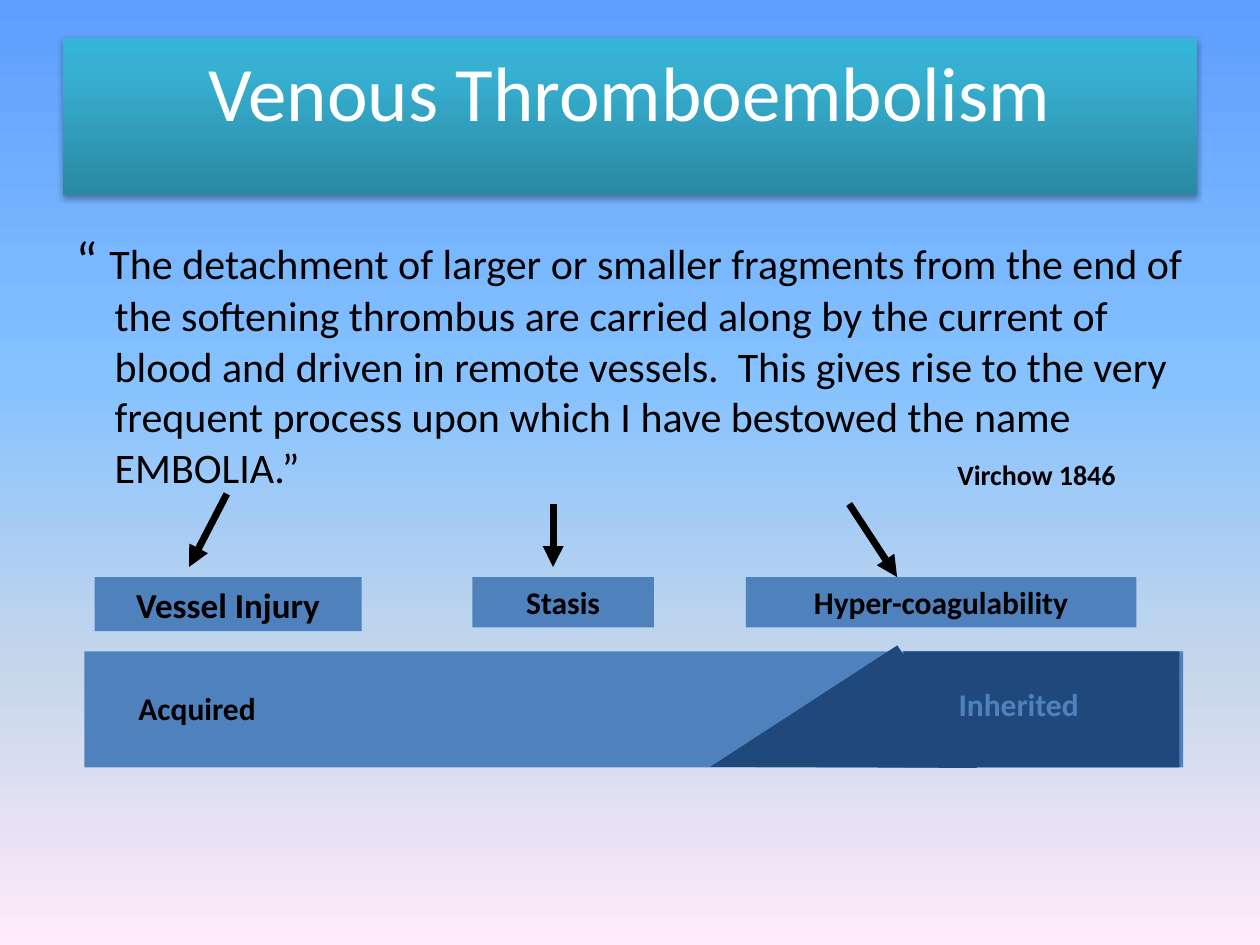
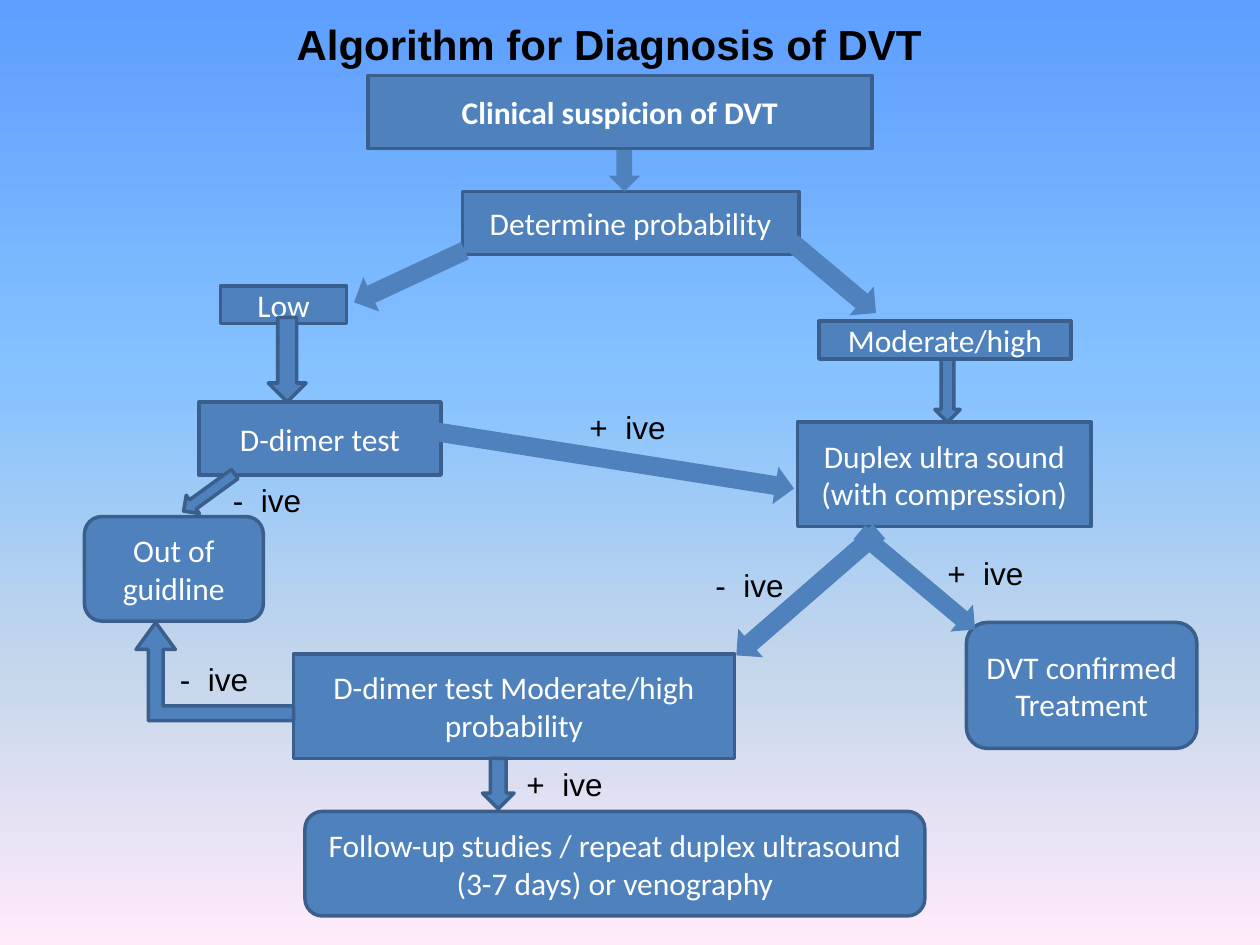
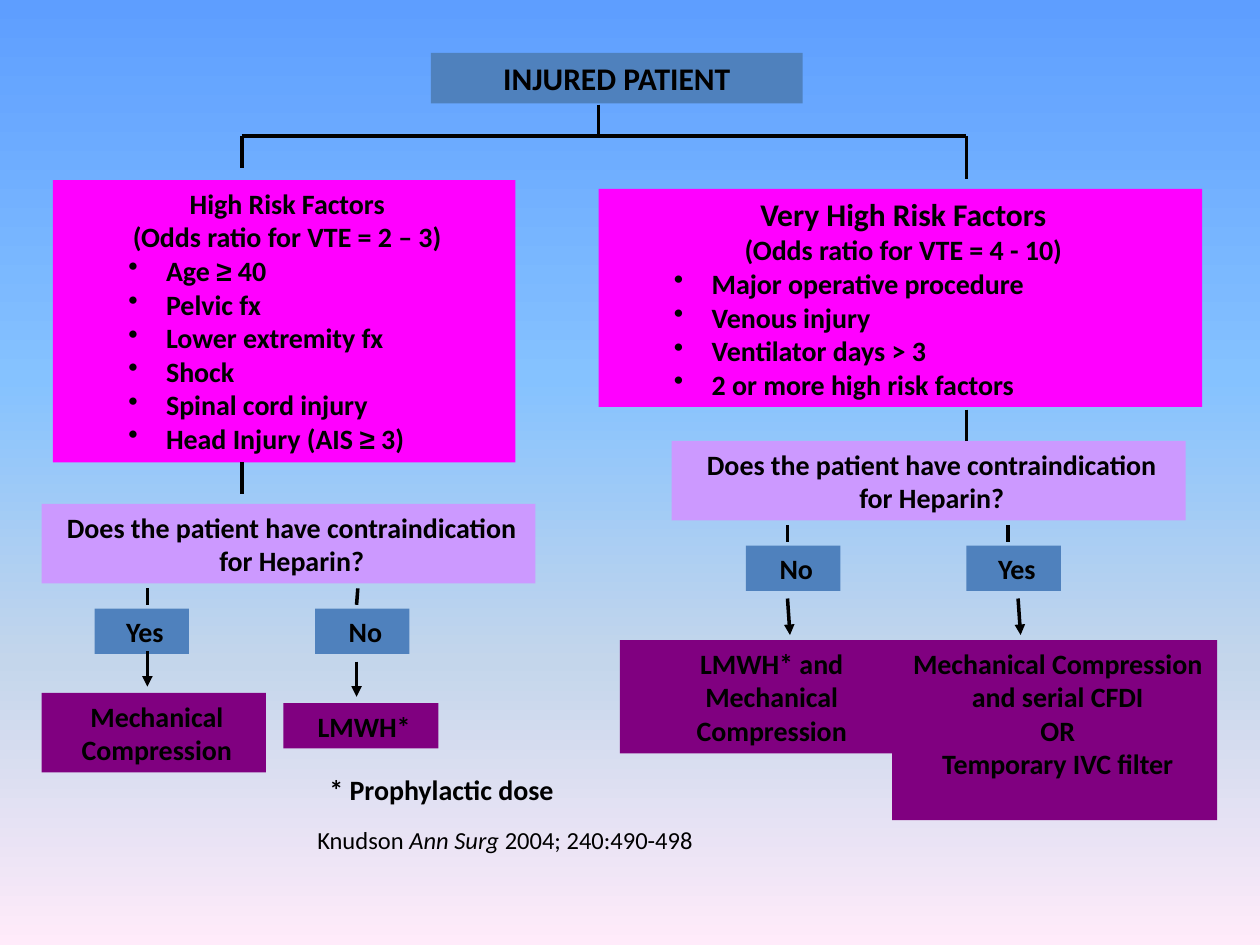
import pptx
import pptx.dml.color
import pptx.enum.dml
import pptx.enum.shapes
import pptx.enum.text
import pptx.oxml
import pptx.oxml.ns
import pptx.util
from pptx.util import Inches

COLORS = {
    "black": "000000",
    "white": "FFFFFF",
    "blue": "4F81BD",
    "outline": "3A5F8C",
    "navy": "1F497D",
    "magenta": "FF00FF",
    "lilac": "CC99FF",
    "purple": "800080",
}
SKY = [(0, "5E9EFF"), (40, "85C2FF"), (70, "C4D6EB"), (100, "FFEBFA")]
TEAL = [(0, "2A88A2"), (80, "37B1D2"), (100, "34B4D6")]
SHAPES = pptx.enum.shapes.MSO_SHAPE
ALIGN = pptx.enum.text.PP_ALIGN
ANCHOR = pptx.enum.text.MSO_ANCHOR
QUESTION = "Does the patient have contraindication for Heparin?"


def rgb(name):
    return pptx.dml.color.RGBColor.from_string(COLORS[name])


def make_element(tag, **attributes):
    element = pptx.oxml.parse_xml(f"<{tag} {pptx.oxml.ns.nsdecls('a')}/>")
    for key, value in attributes.items():
        element.set(key, str(value))
    return element


def add_child(parent, tag, **attributes):
    child = make_element(tag, **attributes)
    parent.append(child)
    return child


def fill_gradient(fill, holder, stops, angle):
    fill.gradient()
    fill.gradient_angle = angle
    stop_list = next(holder.iter(pptx.oxml.ns.qn("a:gsLst")))
    for stop in list(stop_list):
        stop_list.remove(stop)
    for position, color in stops:
        stop = add_child(stop_list, "a:gs", pos=position * 1000)
        add_child(stop, "a:srgbClr", val=color)


def fill_solid(shape, color):
    shape.fill.solid()
    shape.fill.fore_color.rgb = rgb(color)


def place(shape, at):
    shape.left, shape.top, shape.width, shape.height = map(Inches, at)


def set_indent(para, left, first=0):
    properties = para._p.get_or_add_pPr()
    properties.set("marL", str(Inches(left)))
    properties.set("indent", str(Inches(first)))
    return properties


def write(shape, paragraphs, size=18, color="black", bold=False, font="Calibri",
          align=ALIGN.CENTER, anchor=ANCHOR.TOP, indent=0):
    frame = shape.text_frame
    frame.word_wrap = True
    frame.auto_size = pptx.enum.text.MSO_AUTO_SIZE.NONE
    frame.vertical_anchor = anchor
    for index, spans in enumerate(paragraphs):
        para = frame.add_paragraph() if index else frame.paragraphs[0]
        para.alignment = align
        para.font.size = pptx.util.Pt(size)
        para.font.name = font
        para.font.bold = bold
        para.font.color.rgb = rgb(color)
        if indent:
            set_indent(para, indent)
        for text, style in [(spans, {})] if isinstance(spans, str) else spans:
            span = para.add_run()
            span.text = text
            for key, value in style.items():
                setattr(span.font, key, value)


def add_title(slide, at, text, **style):
    title = slide.shapes.title
    place(title, at)
    write(title, [text], **style)
    return title


def add_text(slide, at, spans, **style):
    box = slide.shapes.add_textbox(*map(Inches, at))
    write(box, [spans], **{"align": ALIGN.LEFT, **style})


def add_block(slide, at, color="blue", kind=SHAPES.RECTANGLE, outlined=False, rotation=0):
    block = slide.shapes.add_shape(kind, *map(Inches, at))
    block.shadow.inherit = False
    block.rotation = rotation
    fill_solid(block, color)
    if outlined:
        block.line.color.rgb = rgb("outline")
        block.line.width = pptx.util.Pt(2)
    else:
        block.line.fill.background()
    return block


def add_label(slide, at, paragraphs, color="blue", **style):
    block = add_block(slide, at, color)
    write(block, paragraphs, **{"size": 16, "bold": True, "indent": 0.05, **style})
    return block


def add_step(slide, at, paragraphs, kind=SHAPES.RECTANGLE, bold=False):
    block = add_block(slide, at, kind=kind, outlined=True)
    write(block, paragraphs, color="white", bold=bold, anchor=ANCHOR.MIDDLE)


def add_line(slide, start, end, width=2, arrow=False):
    line = slide.shapes.add_connector(
        pptx.enum.shapes.MSO_CONNECTOR.STRAIGHT, *map(Inches, start + end))
    line.line.color.rgb = rgb("black")
    line.line.width = pptx.util.Pt(width)
    if arrow:
        add_child(line.line._get_or_add_ln(), "a:tailEnd", type="triangle")
    add_child(line.element.spPr, "a:effectLst")


def add_risk_box(slide, at, heading, heading_size, odds, factors):
    box = add_label(slide, at, [heading, odds, *factors], "magenta")
    paragraphs = box.text_frame.paragraphs
    paragraphs[0].font.size = pptx.util.Pt(heading_size)
    for para in paragraphs[2:]:
        para.alignment = ALIGN.LEFT
        set_indent(para, 0.8, -0.3).insert(0, make_element("a:buChar", char="•"))


def add_title_shadow(title):
    effects = add_child(title.element.spPr, "a:effectLst")
    shadow = add_child(effects, "a:outerShdw", blurRad=pptx.util.Pt(3.1),
                       dist=pptx.util.Pt(1.8), dir=90 * 60000, rotWithShape=0)
    color = add_child(shadow, "a:srgbClr", val=COLORS["black"])
    add_child(color, "a:alpha", val=35000)


def build_embolism(slide):
    title = add_title(slide, (0.5, 0.3, 9, 1.25), "Venous Thromboembolism",
                      size=44, color="white")
    fill_gradient(title.fill, title.element, TEAL, 90)
    add_title_shadow(title)

    quote = slide.placeholders[1]
    place(quote, (0.5, 1.75, 9, 2.42))
    write(quote, [[
        ("“ ", {"size": pptx.util.Pt(30)}),
        ("The detachment of larger or smaller fragments from the end of the softening "
         "thrombus are carried along by the current of blood and driven in remote "
         "vessels.  This gives rise to the very frequent process upon which I have "
         "bestowed the name EMBOLIA.”", {}),
    ]], size=24, align=ALIGN.LEFT)
    set_indent(quote.text_frame.paragraphs[0], 0.31, -0.31).insert(
        0, make_element("a:buNone"))

    for left, width, height, cause, size in [
        (0.75, 2.12, 0.43, "Vessel Injury", 20),
        (3.75, 1.44, 0.4, "Stasis", 18),
        (5.92, 3.1, 0.4, "Hyper-coagulability", 18),
    ]:
        add_label(slide, (left, 4.58, width, height), [cause], size=size, indent=0)
    add_text(slide, (7.5, 3.58, 1.89, 0.36), "Virchow 1846", size=16, bold=True)
    for start, end in [((1.8, 3.92), (1.5, 4.5)), ((4.39, 4), (4.39, 4.5)),
                       ((6.74, 4), (7.12, 4.58))]:
        add_line(slide, start, end, width=4, arrow=True)

    add_block(slide, (0.67, 5.17, 8.72, 0.92))
    add_text(slide, (1, 5.42, 1.89, 0.4), "Acquired", bold=True)
    add_block(slide, (5.81, 5.51, 1.77, 1.16), "navy", SHAPES.RIGHT_TRIANGLE, rotation=147)
    add_block(slide, (7.17, 5.17, 2.19, 0.92), "navy")
    add_text(slide, (7.51, 5.39, 1.63, 0.4), "Inherited", color="blue", bold=True)


def build_algorithm(slide):
    add_title(slide, (2.25, 0.1, 5.17, 0.5), "Algorithm for Diagnosis of DVT",
              size=24, bold=True, font="Arial")
    add_step(slide, (2.92, 0.6, 4, 0.58), ["Clinical suspicion of DVT"], bold=True)
    for at, paragraphs in [
        ((3.67, 1.52, 2.67, 0.5), ["Determine probability"]),
        ((1.75, 2.27, 1, 0.3), ["Low"]),
        ((6.5, 2.55, 2, 0.3), ["Moderate/high"]),
        ((1.58, 3.19, 1.92, 0.58), ["D-dimer test"]),
        ((6.33, 3.35, 2.33, 0.83), ["Duplex ultra sound (with compression)"]),
        ((2.33, 5.19, 3.5, 0.83), ["D-dimer test Moderate/high", "probability"]),
    ]:
        add_step(slide, at, paragraphs)
    for at, outcome in [
        ((0.67, 4.1, 1.42, 0.83), "Out of guidline"),
        ((7.67, 4.94, 1.83, 1), "DVT confirmed Treatment"),
        ((2.42, 6.44, 4.92, 0.83),
         "Follow-up studies / repeat duplex ultrasound (3-7 days) or venography"),
    ]:
        add_step(slide, at, [outcome], SHAPES.ROUNDED_RECTANGLE)

    for at, rotation, outlined in [
        ((4.83, 1.19, 0.25, 0.33), 0, False),
        ((3.1, 1.71, 0.3, 0.97), 65, False),
        ((6.47, 1.77, 0.3, 0.87), 310, False),
        ((2.13, 2.52, 0.3, 0.67), 0, True),
        ((7.42, 2.85, 0.2, 0.5), 0, True),
        ((1.57, 3.66, 0.18, 0.5), 54, True),
        ((3.83, 6.02, 0.25, 0.4), 0, True),
        ((7.14, 4.01, 0.28, 1.2), 310, False),
        ((4.72, 2.2, 0.3, 2.9), 279, False),
        ((6.26, 3.96, 0.3, 1.5), 49, False),
    ]:
        add_block(slide, at, kind=SHAPES.DOWN_ARROW, outlined=outlined, rotation=rotation)
    return_arrow = add_block(slide, (1.08, 4.94, 1.25, 0.78), kind=SHAPES.BENT_UP_ARROW,
                             outlined=True)
    return_arrow.element.spPr.get_or_add_xfrm().set("flipH", "1")
    for index, value in enumerate((0.15, 0.2, 0.275)):
        return_arrow.adjustments[index] = value

    for result, corners in [
        ("+  ive", [(4.58, 3.19), (7.42, 4.35), (4.08, 6.02)]),
        ("-  ive", [(1.75, 3.77), (1.33, 5.19), (5.58, 4.44)]),
    ]:
        for left, top in corners:
            add_text(slide, (left, top, 0.92, 0.4), result, font="Arial")


def build_injured_patient(slide):
    title = add_title(slide, (3.42, 0.42, 2.95, 0.4), "INJURED PATIENT", bold=True)
    fill_solid(title, "blue")
    add_text(slide, (2.42, 6.5, 3.83, 0.33), [
        ("Knudson ", {}), ("Ann Surg", {"italic": True}), (" 2004; 240:490-498", {}),
    ], size=14)

    at_least = ("≥", {"name": "Arial"})
    add_risk_box(slide, (0.42, 1.43, 3.67, 2.24), "High Risk Factors", 16,
                 "(Odds ratio for VTE = 2 – 3)",
                 [[("Age ", {}), at_least, (" 40", {})], "Pelvic fx",
                  "Lower extremity fx", "Shock", "Spinal cord injury",
                  [("Head Injury (AIS ", {}), at_least, (" 3)", {})]])
    add_risk_box(slide, (4.75, 1.5, 4.79, 1.73), "Very High Risk Factors", 18,
                 "(Odds ratio for VTE = 4 - 10)",
                 ["Major operative procedure", "Venous injury", "Ventilator days > 3",
                  "2 or more high risk factors"])

    for at in [(0.33, 4, 3.92, 0.63), (5.33, 3.5, 4.08, 0.63)]:
        add_label(slide, at, [QUESTION], "lilac")
    for left, top, answer in [(0.75, 4.83, "Yes"), (2.5, 4.83, "No"),
                              (7.67, 4.33, "Yes"), (5.92, 4.33, "No")]:
        add_label(slide, (left, top, 0.75, 0.36), [answer])
    for at, treatment in [
        ((0.33, 5.5, 1.78, 0.63), ["Mechanical Compression"]),
        ((2.25, 5.58, 1.23, 0.36), ["LMWH*"]),
        ((4.92, 5.08, 2.36, 0.9), ["LMWH* and Mechanical Compression"]),
        ((7.08, 5.08, 2.58, 1.43),
         ["Mechanical Compression and serial CFDI", "OR", "Temporary IVC filter"]),
    ]:
        add_label(slide, at, treatment, "purple")
    add_text(slide, (2.25, 6.08, 2.46, 0.36), "* Prophylactic dose", size=16, bold=True,
             align=ALIGN.CENTER, indent=0.05)

    for start, end in [
        ((4.75, 0.83), (4.75, 1.08)), ((1.92, 1.08), (7.67, 1.08)),
        ((1.92, 1.08), (1.92, 1.33)), ((7.67, 1.08), (7.67, 1.42)),
        ((7.67, 3.25), (7.67, 3.5)), ((1.92, 3.67), (1.92, 3.92)),
        ((6.25, 4.17), (6.25, 4.3)), ((8, 4.17), (8, 4.3)),
        ((1.17, 4.67), (1.17, 4.8)), ((2.84, 4.67), (2.83, 4.8)),
    ]:
        add_line(slide, start, end)
    for start, end in [
        ((1.17, 5.17), (1.17, 5.45)), ((2.83, 5.25), (2.83, 5.53)),
        ((6.25, 4.75), (6.27, 5.04)), ((8.08, 4.75), (8.1, 5.04)),
    ]:
        add_line(slide, start, end, arrow=True)


def main():
    deck = pptx.Presentation()
    deck.slide_width, deck.slide_height = Inches(10), Inches(7.5)
    master = deck.slide_master
    fill_gradient(master.background.fill, master.element, SKY, 270)
    content_layout, title_layout = deck.slide_layouts[1], deck.slide_layouts[5]
    for layout, build in [(content_layout, build_embolism),
                          (title_layout, build_algorithm),
                          (title_layout, build_injured_patient)]:
        build(deck.slides.add_slide(layout))
    deck.save("out.pptx")


if __name__ == "__main__":
    main()
